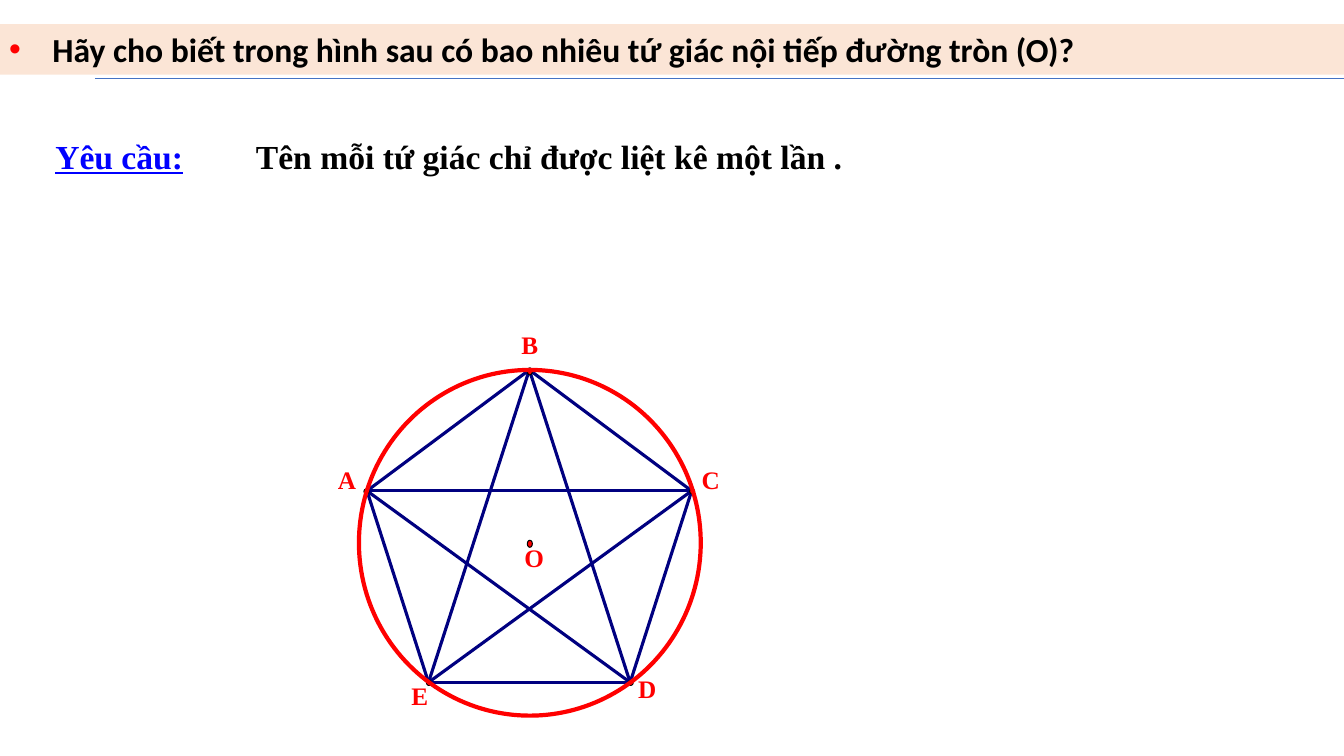
import dataclasses
import itertools
import typing

import lxml.etree
import pptx
import pptx.dml.color
import pptx.enum.shapes
import pptx.enum.text
import pptx.oxml
import pptx.oxml.ns
import pptx.util

SCALE = 9144


@dataclasses.dataclass(frozen=True)
class Theme:
    band: str = "FBE5D6"
    rule: str = "4472C4"
    ink: str = "000000"
    blue: str = "0000FF"
    navy: str = "000080"
    red: str = "FF0000"
    head: str = "Calibri"
    serif: str = "Times New Roman"
    large: int = 24
    small: int = 18


@dataclasses.dataclass(frozen=True)
class Box:
    left: int
    top: int
    width: int
    height: int

    def emu(self) -> list[int]:
        return [px(side) for side in dataclasses.astuple(self)]


@dataclasses.dataclass(frozen=True)
class Point:
    name: str
    x: int
    y: int
    dot: Box
    label: Box


THEME = Theme()

CORNERS = [
    Point("A", 364, 487, Box(361, 485, 5, 5), Box(335, 461, 18, 30)),
    Point("B", 525, 367, Box(523, 365, 5, 7), Box(517, 327, 18, 30)),
    Point("C", 686, 487, Box(684, 485, 5, 5), Box(696, 461, 18, 30)),
    Point("D", 625, 677, Box(623, 675, 5, 5), Box(633, 668, 19, 30)),
    Point("E", 425, 677, Box(423, 675, 5, 5), Box(408, 675, 18, 30)),
]
CENTRE = Point("O", 525, 539, Box(523, 536, 5, 7), Box(520, 538, 18, 30))
CIRCLE = Box(356, 367, 339, 343)


def px(count: int) -> int:
    return pptx.util.Emu(count * SCALE)


def rgb(code: str) -> pptx.dml.color.RGBColor:
    return pptx.dml.color.RGBColor.from_string(code)


def write(shape: typing.Any, text: str, *, font: str, size: int, color: str,
          line: bool = False, wrap: bool = True, inset: bool = True) -> None:
    frame = shape.text_frame
    frame.word_wrap = wrap
    frame.auto_size = pptx.enum.text.MSO_AUTO_SIZE.NONE
    across, down = (px(10), px(5)) if inset else (0, 0)
    frame.margin_left = frame.margin_right = across
    frame.margin_top = frame.margin_bottom = down
    para = frame.paragraphs[0]
    para.alignment = pptx.enum.text.PP_ALIGN.LEFT
    run = para.add_run()
    run.text = text
    run.font.name = font
    run.font.size = pptx.util.Pt(size)
    run.font.bold = True
    run.font.underline = line
    run.font.color.rgb = rgb(color)


def bullet(para: typing.Any, color: str, indent: int) -> None:
    props = para._p.get_or_add_pPr()
    props.set("marL", str(px(indent)))
    props.set("indent", str(px(-indent)))
    tag = pptx.oxml.ns.qn
    tint = lxml.etree.SubElement(props, tag("a:buClr"))
    lxml.etree.SubElement(tint, tag("a:srgbClr"), val=color)
    lxml.etree.SubElement(props, tag("a:buFont"), typeface="Arial")
    lxml.etree.SubElement(props, tag("a:buChar"), char="•")


def stroke(shapes: typing.Any, start: tuple[int, int], end: tuple[int, int],
           color: str, width: float) -> None:
    line = shapes.add_connector(pptx.enum.shapes.MSO_CONNECTOR.STRAIGHT,
                                *map(px, start + end))
    line.line.color.rgb = rgb(color)
    line.line.width = pptx.util.Pt(width)
    lxml.etree.SubElement(line._element.spPr, pptx.oxml.ns.qn("a:effectLst"))


def oval(shapes: typing.Any, box: Box, color: str, width: float,
         fill: str | None = None) -> None:
    shape = shapes.add_shape(pptx.enum.shapes.MSO_SHAPE.OVAL, *box.emu())
    shape.shadow.inherit = False
    if fill:
        shape.fill.solid()
        shape.fill.fore_color.rgb = rgb(fill)
    else:
        shape.fill.background()
    shape.line.color.rgb = rgb(color)
    shape.line.width = pptx.util.Pt(width)


def mark(shapes: typing.Any, point: Point) -> None:
    oval(shapes, point.dot, THEME.ink, 0, THEME.red)
    write(shapes.add_textbox(*point.label.emu()), point.name, font=THEME.serif,
          size=THEME.small, color=THEME.red, wrap=False, inset=False)


def header(slide: typing.Any) -> None:
    title = slide.shapes.title
    title.left, title.top, title.width, title.height = Box(-1, 24, 1335, 50).emu()
    title.fill.solid()
    title.fill.fore_color.rgb = rgb(THEME.band)
    title.text_frame.vertical_anchor = pptx.enum.text.MSO_ANCHOR.MIDDLE
    write(title, "Hãy cho biết trong hình sau có bao nhiêu tứ giác nội tiếp đường tròn (O)?",
          font=THEME.head, size=THEME.large, color=THEME.ink)
    bullet(title.text_frame.paragraphs[0], THEME.red, 43)
    stroke(slide.shapes, (94, 78), (1333, 78), THEME.rule, 0.5)


def prompt(shapes: typing.Any) -> None:
    write(shapes.add_textbox(*Box(244, 130, 722, 50).emu()),
          "Tên mỗi tứ giác chỉ được liệt kê một lần .",
          font=THEME.serif, size=THEME.large, color=THEME.ink)
    write(shapes.add_textbox(*Box(45, 130, 147, 50).emu()), "Yêu cầu:",
          font=THEME.serif, size=THEME.large, color=THEME.blue, line=True, wrap=False)


def figure(shapes: typing.Any) -> None:
    for one, two in itertools.combinations(CORNERS, 2):
        stroke(shapes, (one.x, one.y), (two.x, two.y), THEME.navy, 2.25)
    for point in [CENTRE, *CORNERS]:
        mark(shapes, point)
    oval(shapes, CIRCLE, THEME.red, 3)


def main() -> None:
    deck = pptx.Presentation()
    deck.slide_width, deck.slide_height = px(1333), px(750)
    slide = deck.slides.add_slide(deck.slide_layouts[5])
    header(slide)
    prompt(slide.shapes)
    figure(slide.shapes.add_group_shape().shapes)
    deck.save("out.pptx")


if __name__ == "__main__":
    main()
